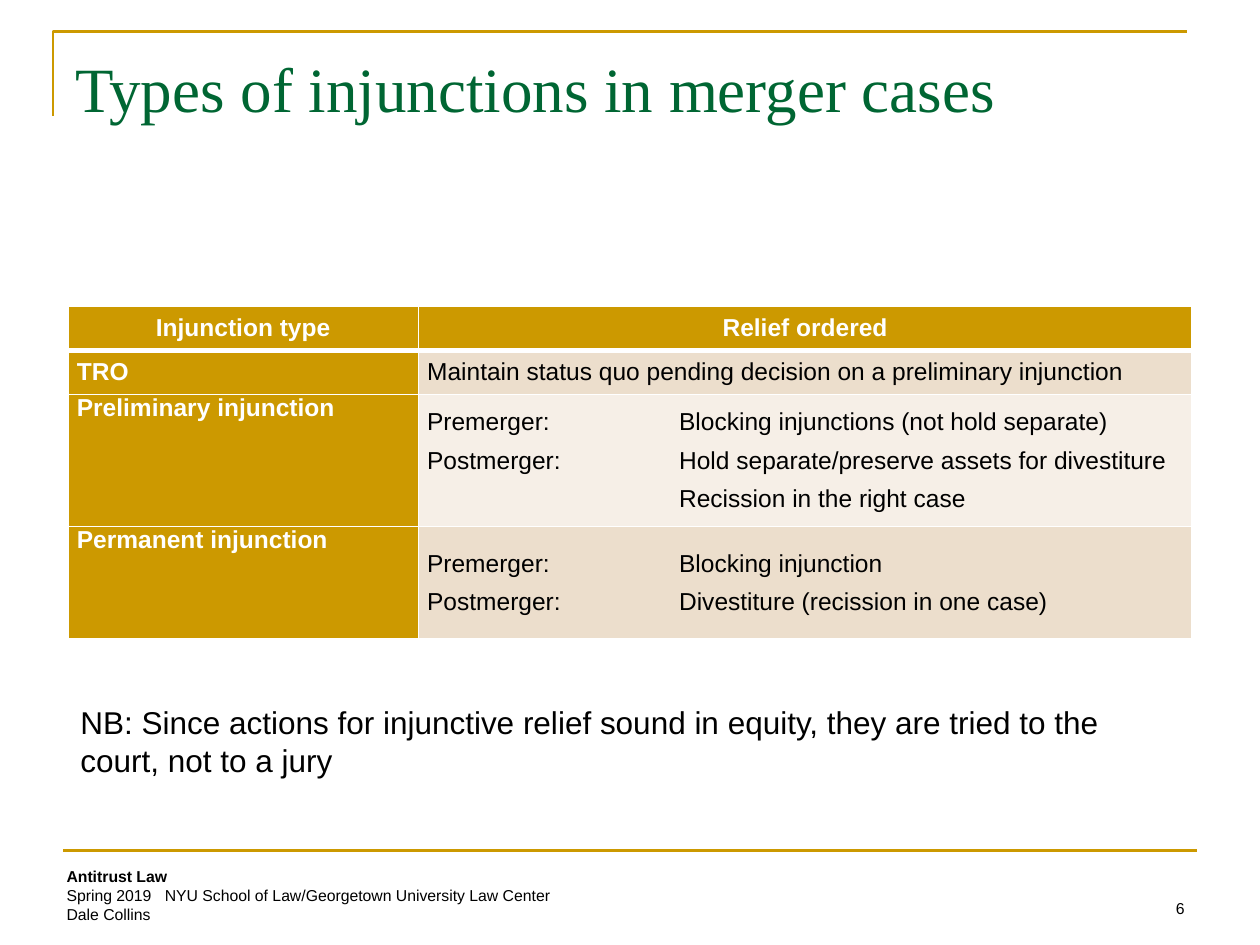
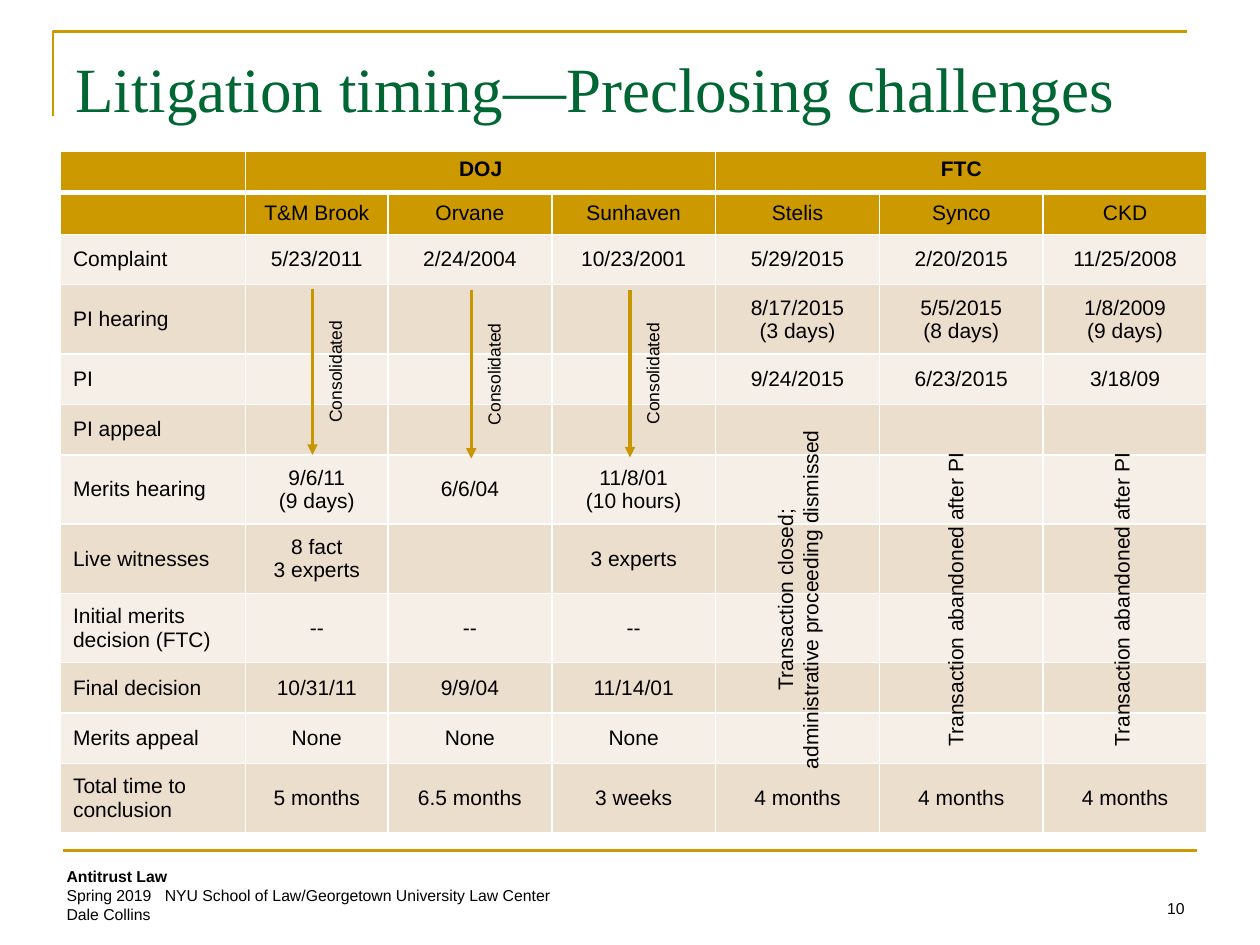
from lxml.etree import SubElement
from pptx import Presentation
from pptx.dml.color import RGBColor
from pptx.enum.shapes import MSO_CONNECTOR
from pptx.enum.text import MSO_ANCHOR, PP_ALIGN
from pptx.oxml.ns import qn
from pptx.util import Inches, Pt

# Content
COLORS = {
    "gold": "CC9900", "arrow": "C89600", "green": "006633", "black": "000000",
    "white": "FFFFFF", "light": "F6EFE7", "dark": "ECDECC",
}
COURSE = "Antitrust Law"
COURSE_DETAILS = "Spring 2019\tNYU School of Law/Georgetown University Law Center\nDale Collins"

INJUNCTIONS = [
    ["Injunction type", "Relief ordered"],
    ["TRO", "Maintain status quo pending decision on a preliminary injunction"],
    ["Preliminary injunction", [
        "Premerger:\tBlocking injunctions (not hold separate)",
        "Postmerger:\tHold separate/preserve assets for divestiture",
        "\tRecission in the right case"]],
    ["Permanent injunction", [
        "Premerger:\tBlocking injunction",
        "Postmerger:\tDivestiture (recission in one case)"]],
]
JURY_NOTE = ("NB: Since actions for injunctive relief sound in equity, "
             "they are tried to the court, not to a jury")

TIMELINE = [
    ["", "DOJ", "", "", "FTC", "", ""],
    ["", "T&M Brook", "Orvane", "Sunhaven", "Stelis", "Synco", "CKD"],
    ["Complaint", "5/23/2011", "2/24/2004", "10/23/2001", "5/29/2015", "2/20/2015", "11/25/2008"],
    ["PI hearing", "", "", "", "8/17/2015\n(3 days)", "5/5/2015\n(8 days)", "1/8/2009\n(9 days)"],
    ["PI", "", "", "", "9/24/2015", "6/23/2015", "3/18/09"],
    ["PI appeal", "", "", "", "", "", ""],
    ["Merits hearing", "9/6/11\n(9 days)", "6/6/04", "11/8/01\n(10 hours)", "", "", ""],
    ["Live witnesses", "8 fact\n3 experts", "", "3 experts", "", "", ""],
    ["Initial merits decision (FTC)", "--", "--", "--", "", "", ""],
    ["Final decision", "10/31/11", "9/9/04", "11/14/01", "", "", ""],
    ["Merits appeal", "None", "None", "None", "", "", ""],
    ["Total time to conclusion", "5 months", "6.5 months", "3 weeks",
     "4 months", "4 months", "4 months"],
]
TALL_ROWS = {3, 6, 7, 8, 11}
# x, top and bottom of each consolidation arrow
CONSOLIDATIONS = [(2.48, 2.29, 3.61), (3.74, 2.3, 3.64), (5, 2.3, 3.63)]
# Centre x, box height and text of each upright outcome
OUTCOMES = [
    (6.33, 0.5, "Transaction closed;\nadministrative proceeding dismissed"),
    (7.58, 0.3, "Transaction abandoned after PI"),
    (8.9, 0.3, "Transaction abandoned after PI"),
]


def color(name):
    return RGBColor.from_string(COLORS[name])


# Text
def write(frame, content, size=12, font="Arial", ink="black", bold=False,
          align=PP_ALIGN.LEFT, anchor=MSO_ANCHOR.TOP, after=0, tab=None):
    """Fill a frame; content is a text or a list of paragraphs.

    A paragraph may itself be a list of (text, bold) spans.
    """
    frame.word_wrap = True
    frame.vertical_anchor = anchor
    paragraphs = content if isinstance(content, list) else [content]
    for index, paragraph in enumerate(paragraphs):
        para = frame.add_paragraph() if index else frame.paragraphs[0]
        para.alignment = align
        para.space_after = Pt(after)
        if tab:
            tabs = SubElement(para._p.get_or_add_pPr(), qn("a:tabLst"))
            SubElement(tabs, qn("a:tab"), pos=str(Inches(tab)), algn="l")
        spans = paragraph if isinstance(paragraph, list) else [(paragraph, bold)]
        for text, is_bold in spans:
            for number, line in enumerate(text.split("\n")):
                if number:
                    para.add_line_break()
                if line:
                    span = para.add_run()
                    span.text = line
                    span.font.size, span.font.name = Pt(size), font
                    span.font.bold = is_bold
                    span.font.color.rgb = color(ink)
        para._p.get_or_add_endParaRPr().set("sz", str(size * 100))


def add_text(page, left, top, width, height, content, rotation=0, **style):
    box = page.shapes.add_textbox(*map(Inches, (left, top, width, height)))
    box.rotation = rotation
    write(box.text_frame, content, **style)


def add_upright(page, center_x, center_y, length, thickness, text, size):
    add_text(page, center_x - length / 2, center_y - thickness / 2, length, thickness,
             text, rotation=270, size=size, align=PP_ALIGN.CENTER)


# Lines
def add_line(page, start, end, ink="gold", weight=1.5, arrow=False):
    line = page.shapes.add_connector(MSO_CONNECTOR.STRAIGHT, *map(Inches, start + end))
    line.line.color.rgb = color(ink)
    line.line.width = Pt(weight)
    if arrow:
        SubElement(line.line._get_or_add_ln(), qn("a:tailEnd"), type="triangle")
    SubElement(line._element.spPr, qn("a:effectLst"))


# Tables
def add_grid(page, left, top, widths, heights):
    table = page.shapes.add_table(
        len(heights), len(widths), *map(Inches, (left, top, sum(widths), sum(heights)))).table
    table.first_row = table.horz_banding = False
    for column, width in zip(table.columns, widths):
        column.width = Inches(width)
    for row, height in zip(table.rows, heights):
        row.height = Inches(height)
    return table


def paint(cell, row, fill):
    """White borders, heavier under the first row, then the fill."""
    for side in "LRTB":
        heavy = (row, side) in {(0, "B"), (1, "T")}
        border = SubElement(cell._tc.get_or_add_tcPr(), qn("a:ln" + side),
                            w=str(Pt(3 if heavy else 1)))
        solid = SubElement(border, qn("a:solidFill"))
        SubElement(solid, qn("a:srgbClr"), val=COLORS["white"])
    cell.fill.solid()
    cell.fill.fore_color.rgb = color(fill)


# Parts shared by both slides
def add_page(deck, title, number):
    page = deck.slides.add_slide(deck.slide_layouts[6])
    outline = page.shapes.build_freeform(Inches(0.42), Inches(0.92))
    outline.add_line_segments(
        [(Inches(0.42), Inches(0.25)), (Inches(9.42), Inches(0.25))], close=False)
    corner = outline.convert_to_shape()
    corner.shadow.inherit = False
    corner.fill.background()
    corner.line.color.rgb = color("gold")
    corner.line.width = Pt(1.5)
    add_line(page, (0.5, 6.75), (9.5, 6.75))
    add_text(page, 0.43, 6.83, 4.67, 0.56,
             [[(COURSE + "\n", True), (COURSE_DETAILS, False)]], size=9, tab=0.78)
    add_text(page, 0.5, 0.3, 9, 0.78, title, size=36, font="Times New Roman",
             ink="green", anchor=MSO_ANCHOR.MIDDLE)
    add_text(page, 7.17, 6.83, 2.33, 0.5, str(number), size=9,
             align=PP_ALIGN.RIGHT, anchor=MSO_ANCHOR.BOTTOM)
    return page


def build_injunctions(deck):
    page = add_page(deck, "Types of injunctions in merger cases", 6)
    table = add_grid(page, 0.54, 2.43, [2.78, 6.14], [0.35, 0.35, 1.05, 0.89])
    for r, row in enumerate(INJUNCTIONS):
        for c, content in enumerate(row):
            cell = table.cell(r, c)
            heading = r == 0 or c == 0
            paint(cell, r, "gold" if heading else ("light", "dark")[r % 2])
            cell.margin_left = cell.margin_right = Inches(0.07)
            cell.margin_top = cell.margin_bottom = 0
            write(cell.text_frame, content, size=14, bold=heading, after=6, tab=2,
                  ink="white" if heading else "black",
                  align=PP_ALIGN.LEFT if r else PP_ALIGN.CENTER)
            cell.vertical_anchor = MSO_ANCHOR.TOP if c == 0 and r > 1 else MSO_ANCHOR.MIDDLE
    add_text(page, 0.54, 5.53, 8.73, 0.71, JURY_NOTE, size=18)


def build_timeline(deck):
    page = add_page(deck, "Litigation timing—Preclosing challenges", 10)
    heights = [0.33 if r < 2 else 0.55 if r in TALL_ROWS else 0.4
               for r in range(len(TIMELINE))]
    table = add_grid(page, 0.48, 1.2, [1.47, 1.13] + [1.3] * 5, heights)
    for r, row in enumerate(TIMELINE):
        for c, content in enumerate(row):
            cell = table.cell(r, c)
            paint(cell, r, "gold" if r < 2 else ("light", "dark")[r % 2])
            write(cell.text_frame, content, bold=r == 0,
                  align=PP_ALIGN.CENTER if c else PP_ALIGN.LEFT)
            cell.vertical_anchor = MSO_ANCHOR.MIDDLE if r else MSO_ANCHOR.TOP
    for first in (1, 4):
        table.cell(0, first).merge(table.cell(0, first + 2))

    # Arrows and upright labels over the table
    for x, top, bottom in CONSOLIDATIONS:
        add_line(page, (x, top), (x, bottom), ink="arrow", weight=1.75, arrow=True)
        add_upright(page, x + 0.18, (top + bottom) / 2, 1.18, 0.27, "Consolidated", 10)
    for x, thickness, text in OUTCOMES:
        add_upright(page, x, 4.76, 3, thickness, text, 12)


def main():
    deck = Presentation()
    deck.slide_width, deck.slide_height = Inches(10), Inches(7.5)
    build_injunctions(deck)
    build_timeline(deck)
    deck.save("out.pptx")


if __name__ == "__main__":
    main()
